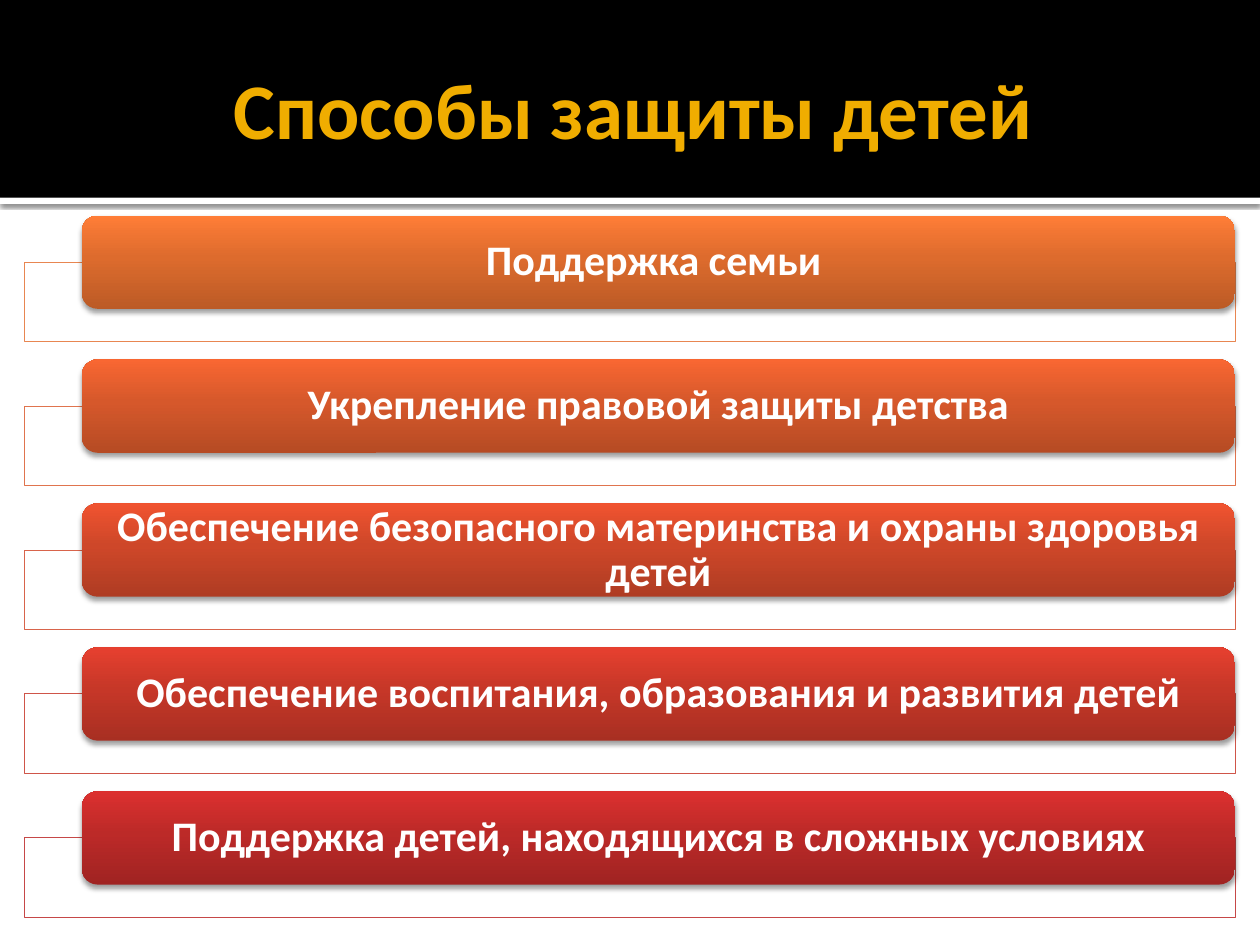
from dataclasses import dataclass

from lxml.etree import SubElement
from pptx import Presentation
from pptx.dml.color import RGBColor
from pptx.enum.shapes import MSO_SHAPE
from pptx.enum.text import MSO_ANCHOR, PP_ALIGN
from pptx.oxml.ns import qn
from pptx.util import Pt


@dataclass(frozen=True)
class Theme:
    font: str = "Calibri"
    title_size: int = 45
    method_size: int = 24
    title: str = "F0AD00"
    header: str = "000000"
    light: str = "FFFFFF"
    shadow: str = "000000"


def add_color(parent, color, opacity=100):
    node = SubElement(parent, qn("a:srgbClr"), val=color)
    if opacity < 100:
        SubElement(node, qn("a:alpha"), val=str(opacity * 1000))


class SlideBuilder:
    def __init__(self, slide, theme):
        self.slide = slide
        self.theme = theme

    def shape(self, preset, left, top, width, height):
        shape = self.slide.shapes.add_shape(preset, Pt(left), Pt(top), Pt(width), Pt(height))
        shape.shadow.inherit = False
        shape.line.fill.background()
        return shape

    def band(self, top, height, color):
        band = self.shape(MSO_SHAPE.RECTANGLE, 0, top, 720, height)
        band.fill.solid()
        band.fill.fore_color.rgb = RGBColor.from_string(color)
        return band

    def cast_shadow(self, shape, opacity, blur, distance):
        effects = shape._element.spPr.find(qn("a:effectLst"))
        shadow = SubElement(effects, qn("a:outerShdw"), blurRad=str(Pt(blur)),
                            dist=str(Pt(distance)), dir="5400000", rotWithShape="0")
        add_color(shadow, self.theme.shadow, opacity)

    def label(self, shape, text, size, color, margins):
        frame = shape.text_frame
        frame.word_wrap = True
        frame.vertical_anchor = MSO_ANCHOR.MIDDLE
        left, top, right, bottom = (Pt(margin) for margin in margins)
        frame.margin_left, frame.margin_top = left, top
        frame.margin_right, frame.margin_bottom = right, bottom
        paragraph = frame.paragraphs[0]
        paragraph.alignment = PP_ALIGN.CENTER
        run = paragraph.add_run()
        run.text = text
        run.font.name = self.theme.font
        run.font.size = Pt(size)
        run.font.bold = True
        run.font.color.rgb = RGBColor.from_string(color)
        return paragraph

    def title(self, text):
        title = self.slide.shapes.title
        title.left, title.top, title.width, title.height = Pt(36), Pt(12.2), Pt(648), Pt(98.6)
        self.label(title, text, self.theme.title_size, self.theme.title, (7.2, 3.6, 3.6, 3.6))
        self.slide.shapes._spTree.append(title._element)

    def header(self, text):
        divider = self.band(113, 3.6, self.theme.light)
        self.cast_shadow(divider, 60, 2.5, 0.8)
        self.band(0, 113, self.theme.header)
        self.title(text)

    def frame(self, top, outline):
        frame = self.shape(MSO_SHAPE.RECTANGLE, 14.2, top, 692, 45.4)
        frame.fill.solid()
        frame.fill.fore_color.rgb = RGBColor.from_string(self.theme.light)
        fill_color = frame._element.spPr.find(qn("a:solidFill"))[0]
        SubElement(fill_color, qn("a:alpha"), val="90000")
        frame.line.color.rgb = RGBColor.from_string(outline)
        frame.line.width = Pt(0.5)

    def method(self, top, text, gradient):
        button = self.shape(MSO_SHAPE.ROUNDED_RECTANGLE, 46.8, top, 658.8, 53.3)
        button.fill.gradient()
        fill = button._element.spPr.find(qn("a:gradFill"))
        for child in list(fill):
            fill.remove(child)
        stops = SubElement(fill, qn("a:gsLst"))
        for position, color in zip((0, 55, 100), gradient):
            add_color(SubElement(stops, qn("a:gs"), pos=str(position * 1000)), color)
        SubElement(fill, qn("a:lin"), ang="16200000", scaled="0")
        self.cast_shadow(button, 38, 3.1, 2)
        paragraph = self.label(button, text, self.theme.method_size, self.theme.light,
                               (15.4, 0, 15.4, 0))
        paragraph.line_spacing = 0.9


METHODS = [
    ("Поддержка семьи ", "E88651", ("BC5B26", "DD6B2D", "FF7D37")),
    ("Укрепление правовой защиты детства", "E0744E", ("B64B24", "D6582B", "F96732")),
    ("Обеспечение безопасного материнства и охраны здоровья детей", "D8644B",
     ("AF3C23", "CE4729", "F05330")),
    ("Обеспечение воспитания, образования и развития детей", "CF5549",
     ("A82F22", "C63728", "E6402F")),
    ("Поддержка детей, находящихся в сложных условиях", "C64847",
     ("A02322", "BC2A28", "DC302F")),
]
FIRST_TOP, ROW_PITCH, FRAME_DROP = 123.2, 82.25, 26.6


def main():
    presentation = Presentation()
    presentation.slide_width, presentation.slide_height = Pt(720), Pt(540)
    slide = presentation.slides.add_slide(presentation.slide_layouts[5])
    builder = SlideBuilder(slide, Theme())
    builder.header("Способы защиты детей")
    for row, (text, outline, gradient) in enumerate(METHODS):
        top = FIRST_TOP + row * ROW_PITCH
        builder.frame(top + FRAME_DROP, outline)
        builder.method(top, text, gradient)
    presentation.save("out.pptx")


if __name__ == "__main__":
    main()
